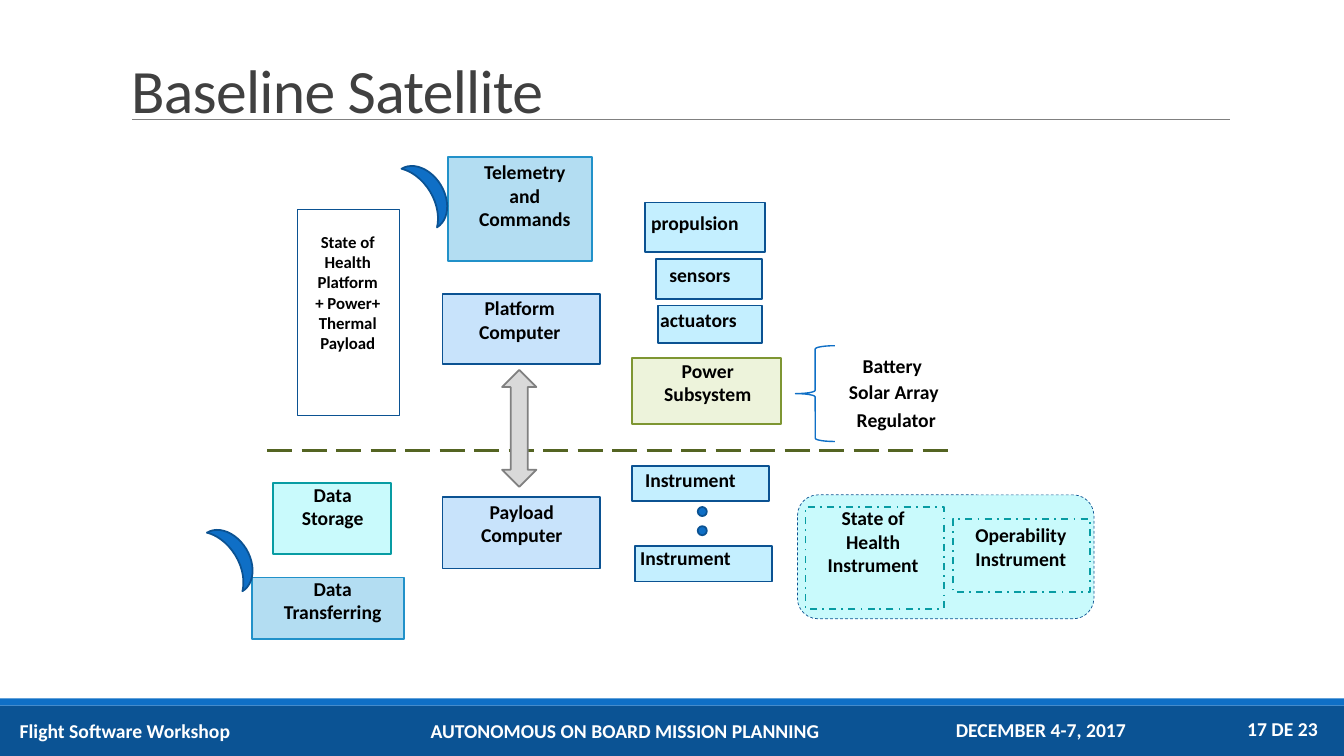
from dataclasses import dataclass

from lxml import etree
from pptx import Presentation
from pptx import util as u
from pptx.dml.color import RGBColor
from pptx.enum import dml, shapes, text
from pptx.oxml import ns

KIND = shapes.MSO_SHAPE
DASH = dml.MSO_LINE
ALIGN = text.PP_ALIGN
ANCHOR = text.MSO_ANCHOR


@dataclass(frozen=True)
class Theme:
    font: str = "Calibri"
    title_size: float = 44
    label_size: float = 14
    small_size: float = 12
    title: str = "404040"
    ink: str = "000000"
    white: str = "FFFFFF"
    rule: str = "808080"
    bar: str = "0B5394"
    accent: str = "0F6FC6"
    navy: str = "0B5292"
    computer: str = "C8E3FB"
    device: str = "C4EFFF"
    link: str = "B3DDF2"
    link_edge: str = "2191C9"
    power: str = "EDF3DB"
    power_edge: str = "7E9632"
    store: str = "C9FAFC"
    store_edge: str = "089CA3"
    divider: str = "546422"
    arrow: str = "D9D9D9"


class Canvas:
    """Draws on one slide; lengths are cells of a square grid, 75 rows high."""

    ROWS = 75

    def __init__(self, prs, theme):
        self.t = theme
        self.s = prs.slides.add_slide(prs.slide_layouts[5])
        self.cell = prs.slide_height / self.ROWS
        self.cols = prs.slide_width / self.cell

    def grid(self, *cells):
        return [u.Emu(round(c * self.cell)) for c in cells]

    def stroke(self, line, color, width, dash=None):
        line.color.rgb = RGBColor.from_string(color)
        line.width = u.Pt(width)
        if dash:
            line.dash_style = dash

    def run(self, p, words, size, color, bold=True):
        r = p.add_run()
        r.text = words
        r.font.name = self.t.font
        r.font.size = u.Pt(size)
        r.font.bold = bold
        r.font.color.rgb = RGBColor.from_string(color)
        return r

    def title(self, words, box):
        sp = self.s.shapes.title
        sp.left, sp.top, sp.width, sp.height = self.grid(*box)
        tf = sp.text_frame
        tf.vertical_anchor = ANCHOR.MIDDLE
        p = tf.paragraphs[0]
        p.alignment = ALIGN.LEFT
        p.line_spacing = 0.85
        r = self.run(p, words, self.t.title_size, self.t.title, bold=False)
        r.font._element.set("spc", "-50")

    def shape(self, kind, box, fill=None, edge=None, width=1.25, dash=None, turn=0):
        sp = self.s.shapes.add_shape(kind, *self.grid(*box))
        sp.shadow.inherit = False
        sp.rotation = turn
        if fill:
            sp.fill.solid()
            sp.fill.fore_color.rgb = RGBColor.from_string(fill)
        else:
            sp.fill.background()
        if edge:
            self.stroke(sp.line, edge, width, dash)
        else:
            sp.line.fill.background()

    def line(self, x1, x2, y, color, width, dash=None):
        c = self.s.shapes.add_connector(shapes.MSO_CONNECTOR.STRAIGHT, *self.grid(x1, y, x2, y))
        self.stroke(c.line, color, width, dash)
        etree.SubElement(c._element.spPr, ns.qn("a:effectLst"))

    def label(self, lines, x, y, w, size=None, color=None, align=ALIGN.CENTER,
              anchor=ANCHOR.TOP):
        size = size or self.t.label_size
        h = 1.3 + 3 * len(lines) * size / self.t.label_size
        tf = self.s.shapes.add_textbox(*self.grid(x, y, w, h)).text_frame
        tf.word_wrap = True
        tf.vertical_anchor = anchor
        for i, words in enumerate(lines):
            p = tf.paragraphs[0] if i == 0 else tf.add_paragraph()
            p.alignment = align
            self.run(p, words, size, color or self.t.ink)

    def node(self, box, style, lines, at, align=ALIGN.CENTER, dash=None):
        fill, edge = style
        self.shape(KIND.RECTANGLE, box, fill, edge, dash=dash)
        self.label(lines, *at, align=align)


def main():
    prs = Presentation()
    prs.slide_width, prs.slide_height = u.Inches(13.33), u.Inches(7.5)
    t = Theme()
    s = Canvas(prs, t)

    # Heading
    s.title("Baseline Satellite", (12, 5, 110, 8.8))
    s.line(13.1, 122, 11.8, t.rule, 0.5)

    # Footer
    s.shape(KIND.RECTANGLE, (0, 70, s.cols, 5), t.bar)
    s.shape(KIND.RECTANGLE, (0, 69.3, s.cols, 0.7), t.accent)
    for words, x, y, w, align in (
        ("Flight Software Workshop", 0, 70.3, 24.8, ALIGN.CENTER),
        ("AUTONOMOUS ON BOARD MISSION PLANNING", 31.2, 70.3, 61.6, ALIGN.CENTER),
        ("DECEMBER 4-7, 2017", 90.1, 70.2, 26.3, ALIGN.CENTER),
        ("17 DE 23", 120.1, 70.1, 11.6, ALIGN.RIGHT),
    ):
        s.label([words], x, y, w, color=t.white, align=align, anchor=ANCHOR.MIDDLE)

    # Computers and radio links
    computer, link = (t.computer, t.navy), (t.link, t.link_edge)
    s.node((43.9, 29.2, 15.6, 6.9), computer, ["Platform", "Computer"], (45.6, 28.9, 11.9))
    s.node((43.9, 49.3, 15.6, 7.1), computer, ["Payload", "Computer"], (45.8, 49.1, 11.9))
    s.node((44.4, 15.6, 14.3, 10.3), link, ["Telemetry", "and", "Commands"], (45.5, 15.4, 13.1))
    s.node((27.1, 47.9, 11.7, 7.1), (t.store, t.store_edge), ["Data", "Storage"],
           (28.2, 47.4, 9.6))
    s.node((25, 57.3, 15.1, 6.1), link, ["Data", "Transferring"], (26.1, 56.7, 13.8))
    for x, y in ((41.4, 15.6), (22.1, 51.7)):
        s.shape(KIND.MOON, (x, y, 2.5, 6.8), t.accent, t.navy, turn=148.8)

    # Platform devices and payload instruments
    for words, box, at in (
        ("propulsion", (64, 20.1, 11.9, 4.9), (63.6, 20.4, 12.6)),
        ("sensors", (65.1, 25.7, 10.5, 4), (65.4, 25.6, 9.6)),
        ("actuators", (65.3, 30.3, 10.3, 3.7), (64.5, 30.1, 11.3)),
        ("Instrument", (62.7, 46.2, 13.6, 3.5), (63, 45.9, 13)),
        ("Instrument", (63, 54.2, 13.6, 3.5), (62.5, 53.7, 13)),
    ):
        s.node(box, (t.device, t.navy), [words], at, ALIGN.LEFT)
    for y in (50.3, 52.2):
        s.shape(KIND.OVAL, (69.2, y, 0.9, 0.9), t.accent, t.navy)

    # Power subsystem and its parts
    s.node((62.7, 35.5, 14.8, 6.6), (t.power, t.power_edge), ["Power", "Subsystem"],
           (63.9, 35.1, 12.6))
    s.shape(KIND.LEFT_BRACE, (78.9, 34.3, 3.9, 9.5), edge=t.accent, width=1)
    for words, x, y, w in (("Battery", 83.8, 34.6, 9.4), ("Solar Array", 82.2, 37.2, 12.9),
                           ("Regulator", 83.1, 40, 11.6)):
        s.label([words], x, y, w)

    # Divider between platform and payload, crossed by the exchange arrow
    s.line(26.5, 94.8, 44.7, t.divider, 2.25, DASH.LONG_DASH)
    s.shape(KIND.UP_DOWN_ARROW, (49.8, 36.7, 3.4, 11.6), t.arrow, t.rule)

    # Health reports
    s.shape(KIND.RECTANGLE, (29.5, 20.8, 10.1, 20.4), edge=t.navy, width=0.25)
    s.label(["State of", "Health", "Platform", "+ Power+", "Thermal", "Payload"],
            29.5, 22.5, 10, t.small_size)
    s.shape(KIND.FLOWCHART_ALTERNATE_PROCESS, (79.1, 49.1, 29.4, 12.3), t.store, t.navy,
            0.5, DASH.DASH)
    for lines, box, at in (
        (["State of", "Health", "Instrument"], (79.9, 50.3, 13.7, 10.1), (80.1, 49.7, 13)),
        (["Operability", "Instrument"], (94.5, 51.5, 13.6, 7.2), (94.7, 51.4, 13.1)),
    ):
        s.node(box, (t.store, t.store_edge), lines, at, dash=DASH.DASH_DOT)

    prs.save("out.pptx")


if __name__ == "__main__":
    main()
